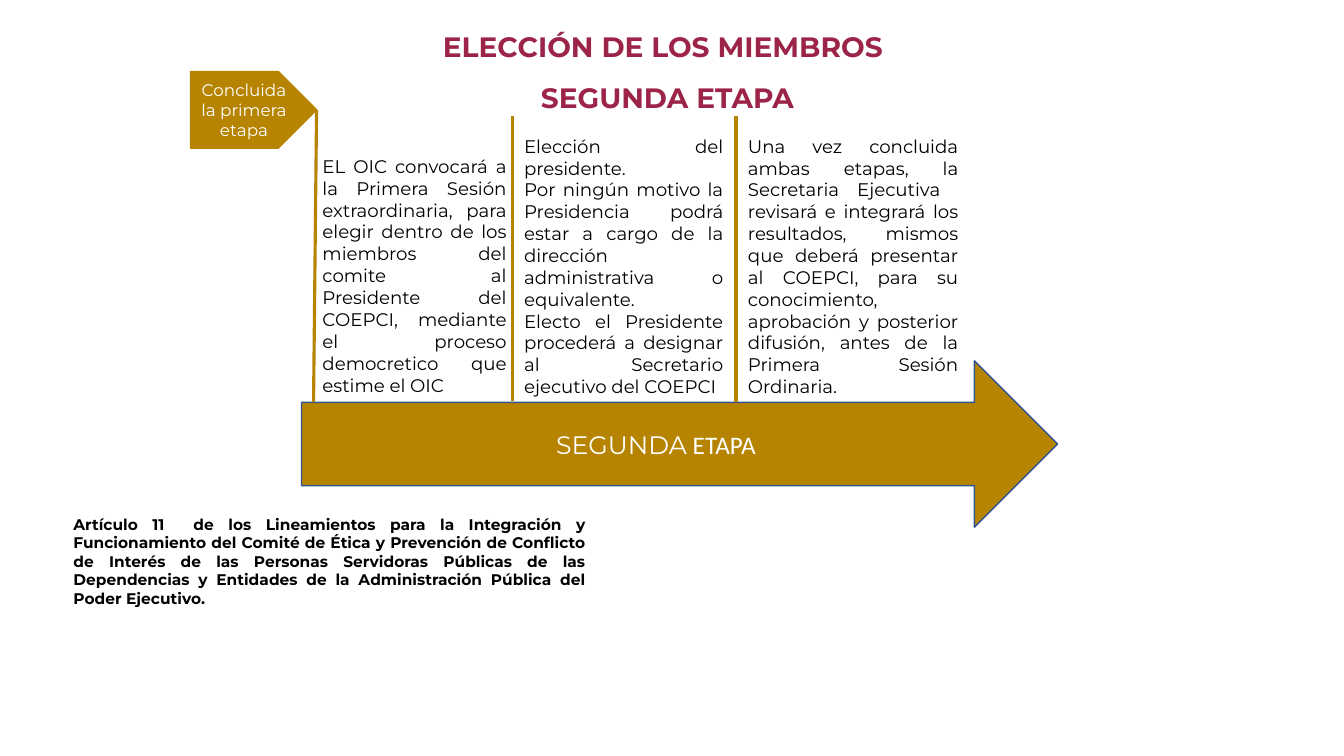
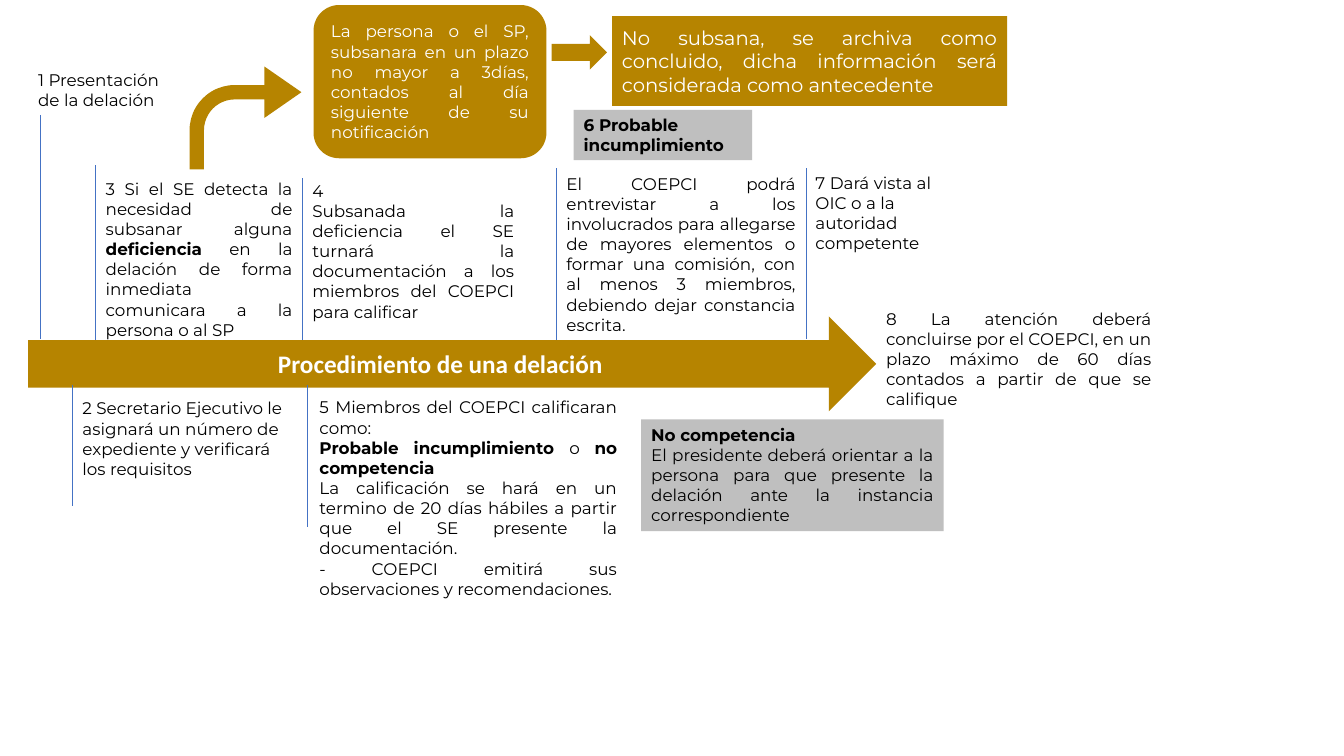
from dataclasses import dataclass
from typing import Optional

from lxml import etree
from pptx import Presentation
from pptx.dml.color import RGBColor
from pptx.enum.shapes import MSO_CONNECTOR, MSO_SHAPE
from pptx.enum.text import MSO_ANCHOR, PP_ALIGN
from pptx.oxml.ns import qn
from pptx.util import Inches, Pt

GOLD = RGBColor(0xB6, 0x84, 0x00)
WINE = RGBColor(0x9D, 0x24, 0x49)
BLACK = RGBColor(0x00, 0x00, 0x00)
WHITE = RGBColor(0xFF, 0xFF, 0xFF)
GRAY = RGBColor(0xBF, 0xBF, 0xBF)
BLUE = RGBColor(0x44, 0x72, 0xC4)
NAVY = RGBColor(0x32, 0x54, 0x91)

STRAIGHT = MSO_CONNECTOR.STRAIGHT
RIGHT_ARROW = MSO_SHAPE.RIGHT_ARROW
BENT_ARROW = MSO_SHAPE.BENT_ARROW
PENTAGON = MSO_SHAPE.PENTAGON
ROUNDED = MSO_SHAPE.ROUNDED_RECTANGLE
RECTANGLE = MSO_SHAPE.RECTANGLE
LEFT, CENTER, JUSTIFY = PP_ALIGN.LEFT, PP_ALIGN.CENTER, PP_ALIGN.JUSTIFY
TOP, MIDDLE = MSO_ANCHOR.TOP, MSO_ANCHOR.MIDDLE

BODY_FONT = "Montserrat"
BAND_FONT = "Calibri"


@dataclass(frozen=True)
class Box:
    left: float
    top: float
    width: float
    height: float

    def lengths(self) -> tuple:
        return tuple(map(Inches, (self.left, self.top, self.width, self.height)))


@dataclass(frozen=True)
class Run:
    text: str
    bold: bool = False
    font: str = BODY_FONT


@dataclass(frozen=True)
class Paragraph:
    runs: tuple[Run, ...]
    align: PP_ALIGN = JUSTIFY


@dataclass(frozen=True)
class Style:
    size: float = 12
    color: RGBColor = BLACK
    anchor: MSO_ANCHOR = TOP
    spacing: float = 1.0


@dataclass(frozen=True)
class Note:
    box: Box
    paragraphs: tuple[Paragraph, ...]
    style: Style = Style()


@dataclass(frozen=True)
class Figure:
    kind: MSO_SHAPE
    box: Box
    paragraphs: tuple[Paragraph, ...] = ()
    style: Style = Style(color=WHITE, anchor=MIDDLE)
    fill: RGBColor = GOLD
    outline: Optional[RGBColor] = None
    adjustments: tuple[float, ...] = ()


@dataclass(frozen=True)
class Divider:
    x: float
    top: float
    bottom: float
    bottom_x: Optional[float] = None


TITLE = Style(20, WINE, spacing=0.9)
STAGE_TEXT = Style(13)
BAND = Style(18, WHITE, MIDDLE)
ARCHIVE = Style(14, WHITE, MIDDLE)


def para(text: str, align: PP_ALIGN = JUSTIFY, bold: bool = False,
         font: str = BODY_FONT) -> Paragraph:
    return Paragraph((Run(text, bold, font),), align)


def write_text(frame, paragraphs: tuple[Paragraph, ...], style: Style) -> None:
    frame.word_wrap = True
    frame.vertical_anchor = style.anchor
    for index, content in enumerate(paragraphs):
        paragraph = frame.add_paragraph() if index else frame.paragraphs[0]
        paragraph.alignment = content.align
        paragraph.line_spacing = style.spacing
        for part in content.runs:
            run = paragraph.add_run()
            run.text = part.text
            run.font.name = part.font
            run.font.size = Pt(style.size)
            run.font.bold = part.bold
            run.font.color.rgb = style.color


def add_note(slide, note: Note) -> None:
    textbox = slide.shapes.add_textbox(*note.box.lengths())
    write_text(textbox.text_frame, note.paragraphs, note.style)


def add_figure(slide, figure: Figure) -> None:
    shape = slide.shapes.add_shape(figure.kind, *figure.box.lengths())
    shape.shadow.inherit = False
    shape.fill.solid()
    shape.fill.fore_color.rgb = figure.fill
    if figure.outline is None:
        shape.line.fill.background()
    else:
        shape.line.color.rgb = figure.outline
        shape.line.width = Pt(1)
    for index, value in enumerate(figure.adjustments):
        shape.adjustments[index] = value
    if figure.paragraphs:
        write_text(shape.text_frame, figure.paragraphs, figure.style)


def add_divider(slide, divider: Divider, color: RGBColor, width: float) -> None:
    bottom_x = divider.x if divider.bottom_x is None else divider.bottom_x
    line = slide.shapes.add_connector(
        STRAIGHT, Inches(divider.x), Inches(divider.top),
        Inches(bottom_x), Inches(divider.bottom))
    line.line.color.rgb = color
    line.line.width = Pt(width)
    etree.SubElement(line._element.spPr, qn("a:effectLst"))


def build_slide(deck, figures: tuple[Figure, ...], dividers: tuple[Divider, ...],
                notes: tuple[Note, ...], line_color: RGBColor,
                line_width: float) -> None:
    slide = deck.slides.add_slide(deck.slide_layouts[6])
    for figure in figures:
        add_figure(slide, figure)
    for divider in dividers:
        add_divider(slide, divider, line_color, line_width)
    for note in notes:
        add_note(slide, note)


ELECTION_FIGURES = (
    Figure(RIGHT_ARROW, Box(2.99, 3.58, 7.5, 1.65),
           (Paragraph((Run("SEGUNDA"), Run(" ETAPA ", font=BAND_FONT)), CENTER),),
           BAND, outline=NAVY),
    Figure(PENTAGON, Box(1.89, 0.71, 1.25, 0.76),
           (para("Concluida la primera etapa", CENTER),), outline=GOLD),
)
ELECTION_DIVIDERS = (
    Divider(3.14, 1.09, 3.99, 3.11),
    Divider(5.08, 1.15, 3.98),
    Divider(7.3, 1.15, 3.99),
)
ELECTION_NOTES = (
    Note(Box(3.84, 0.28, 5.47, 0.46),
         (para("ELECCIÓN DE LOS MIEMBROS", CENTER, True),), TITLE),
    Note(Box(5.16, 0.79, 2.92, 0.46),
         (para("SEGUNDA ETAPA", CENTER, True),), TITLE),
    Note(Box(3.1, 1.49, 2.02, 2.51), (
        para("EL OIC convocará a la Primera Sesión extraordinaria, para elegir "
             "dentro de los miembros del comite al Presidente del COEPCI, "
             "mediante el proceso democretico que estime el OIC"),
    ), STAGE_TEXT),
    Note(Box(5.1, 1.29, 2.17, 2.73), (
        para("Elección del presidente. "),
        para("Por ningún motivo la Presidencia podrá estar a cargo de la "
             "dirección administrativa o equivalente."),
        para("Electo el Presidente procederá a designar al Secretario "
             "ejecutivo del COEPCI"),
    ), STAGE_TEXT),
    Note(Box(7.32, 1.29, 2.28, 2.73), (
        para("Una vez concluida ambas etapas, la Secretaria Ejecutiva  revisará "
             "e integrará los resultados, mismos que deberá presentar al COEPCI, "
             "para su conocimiento, aprobación y posterior difusión, antes de la "
             "Primera Sesión Ordinaria."),
    ), STAGE_TEXT),
    Note(Box(0.63, 5.06, 5.28, 1.03), (
        para("Artículo 11  de los Lineamientos para la Integración y "
             "Funcionamiento del Comité de Ética y Prevención de Conflicto de "
             "Interés de las Personas Servidoras Públicas de las Dependencias y "
             "Entidades de la Administración Pública del Poder Ejecutivo.",
             bold=True),
    ), Style(11)),
)

COMPLAINT_FIGURES = (
    Figure(RIGHT_ARROW, Box(0.28, 3.14, 8.41, 0.94),
           (para("Procedimiento de una delación", CENTER, True, BAND_FONT),), BAND),
    Figure(ROUNDED, Box(3.11, 0.05, 2.31, 1.52), (
        para("La persona o el SP, subsanara en un plazo no mayor a 3días, "
             "contados al día siguiente de su notificación "),
    )),
    Figure(BENT_ARROW, Box(1.88, 0.66, 1.11, 1.02),
           adjustments=(0.14, 0.25, 0.36, 0.44)),
    Figure(RECTANGLE, Box(6.07, 0.16, 3.92, 0.89), (
        para("No subsana, se archiva como concluido, dicha información será "
             "considerada como antecedente "),
    ), ARCHIVE),
    Figure(RIGHT_ARROW, Box(5.47, 0.35, 0.55, 0.34)),
    Figure(RECTANGLE, Box(6.36, 4.16, 3, 1.11), (
        para("No competencia", bold=True),
        para("El presidente deberá orientar a la persona para que presente la "
             "delación ante la instancia correspondiente"),
    ), Style(), GRAY),
    Figure(RECTANGLE, Box(5.69, 1.09, 1.77, 0.5),
           (para("6 Probable incumplimiento", LEFT, True),), Style(), GRAY),
)
COMPLAINT_DIVIDERS = (
    Divider(0.4, 1.14, 3.36),
    Divider(0.95, 1.64, 3.37),
    Divider(0.72, 3.82, 5.02),
    Divider(3, 1.77, 3.37),
    Divider(3.05, 3.82, 5.23),
    Divider(5.52, 1.67, 3.37),
    Divider(8, 1.67, 3.36),
)
COMPLAINT_NOTES = (
    Note(Box(0.28, 0.64, 1.5, 0.5), (para("1 Presentación de la delación", LEFT),)),
    Note(Box(0.72, 3.9, 2.2, 0.91), (
        para("2 Secretario Ejecutivo le asignará un número de expediente y "
             "verificará los requisitos", LEFT),
    )),
    Note(Box(0.95, 1.72, 2.05, 1.72), (
        Paragraph((
            Run("3 Si el SE detecta la necesidad de subsanar alguna "),
            Run("deficiencia", True),
            Run(" en la delación de forma inmediata comunicara a la persona o al SP"),
        )),
    )),
    Note(Box(3, 1.74, 2.2, 1.51), (
        para("4", LEFT),
        para("Subsanada la deficiencia el SE turnará la documentación a los "
             "miembros del COEPCI para calificar"),
    )),
    Note(Box(3.07, 3.89, 3.15, 2.32), (
        para("5 Miembros del COEPCI calificaran como:"),
        Paragraph((
            Run("Probable incumplimiento ", True),
            Run("o "),
            Run("no competencia", True),
        )),
        para("La calificación se hará en un termino de 20 días hábiles a partir "
             "que el SE presente la documentación. "),
        para("- COEPCI emitirá sus observaciones y recomendaciones. "),
    )),
    Note(Box(5.52, 1.67, 2.47, 1.92), (
        para("El COEPCI podrá entrevistar a los involucrados para allegarse de "
             "mayores elementos o formar una comisión, con al menos 3 miembros, "
             "debiendo dejar constancia escrita."),
    )),
    Note(Box(7.99, 1.66, 1.37, 0.91), (
        para("7 Dará vista al OIC o a la autoridad competente", LEFT),
    )),
    Note(Box(8.69, 3.01, 2.83, 1.11), (
        para("8 La atención deberá concluirse por el COEPCI, en un plazo máximo "
             "de 60 días contados a partir de que se califique"),
    )),
)


def main() -> None:
    deck = Presentation()
    deck.slide_width = Inches(13.33)
    deck.slide_height = Inches(7.5)
    build_slide(deck, ELECTION_FIGURES, ELECTION_DIVIDERS, ELECTION_NOTES, GOLD, 2.25)
    build_slide(deck, COMPLAINT_FIGURES, COMPLAINT_DIVIDERS, COMPLAINT_NOTES, BLUE, 0.5)
    deck.save("out.pptx")


if __name__ == "__main__":
    main()
